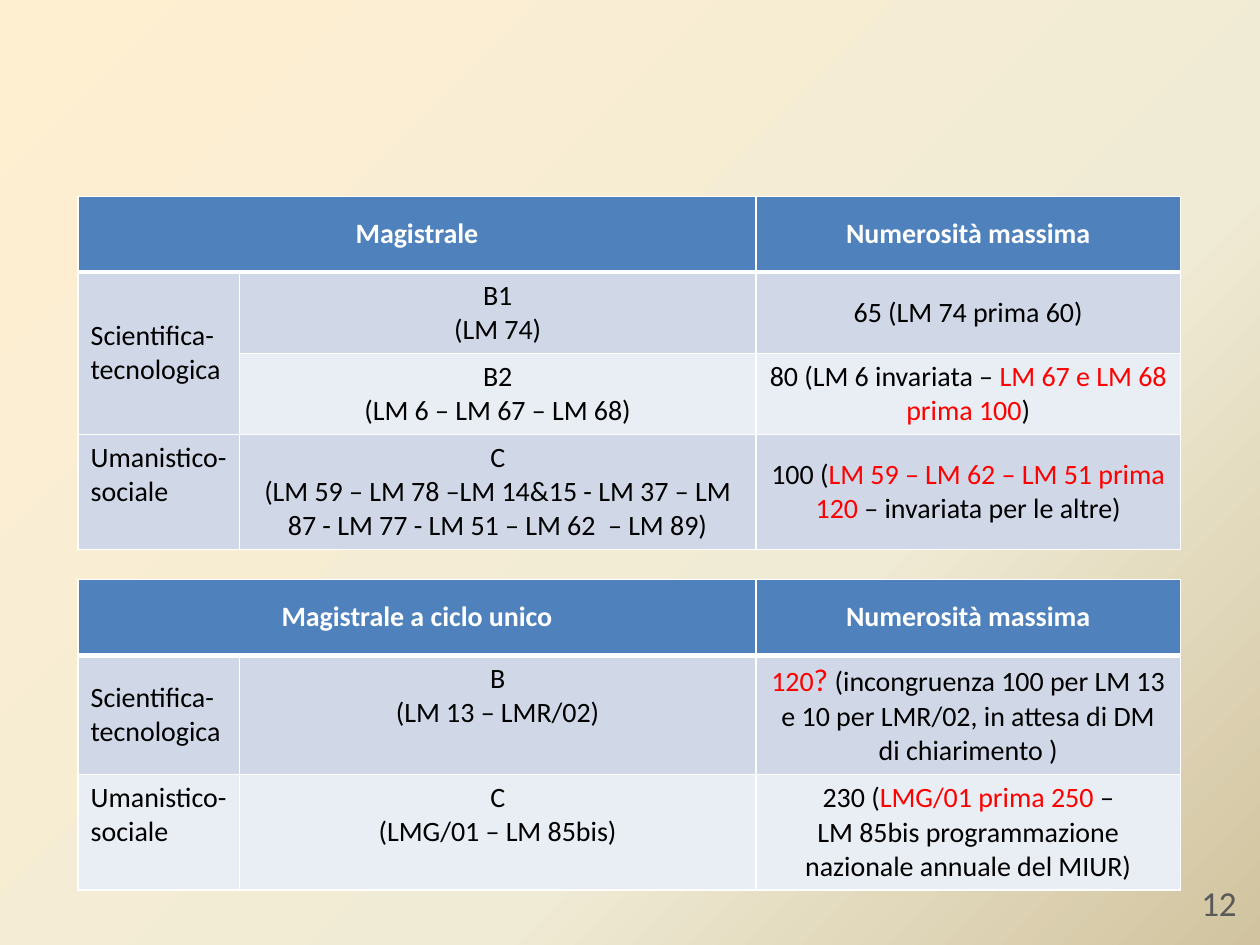
from copy import deepcopy

from pptx import Presentation
from pptx.dml.color import RGBColor
from pptx.enum.text import MSO_ANCHOR, PP_ALIGN
from pptx.oxml import parse_xml
from pptx.oxml.ns import nsdecls, qn
from pptx.util import Inches, Pt

CENTER, LEFT = PP_ALIGN.CENTER, PP_ALIGN.LEFT
TOP, MIDDLE = MSO_ANCHOR.TOP, MSO_ANCHOR.MIDDLE
WHITE = RGBColor(0xFF, 0xFF, 0xFF)
BLACK = RGBColor(0, 0, 0)
RED = RGBColor(0xFF, 0, 0)
GREY = RGBColor(0x59, 0x59, 0x59)
BLUE = RGBColor(0x4F, 0x81, 0xBD)
BAND_DARK = RGBColor(0xD0, 0xD8, 0xE8)
BAND_LIGHT = RGBColor(0xE9, 0xED, 0xF4)
BACKGROUND = [(0, RGBColor(0xFF, 0xEF, 0xD1)),
              (0.65, RGBColor(0xF0, 0xEB, 0xD5)),
              (1, RGBColor(0xD1, 0xC3, 0x9F))]

BODY = {"name": "Calibri", "size": Pt(16), "bold": False}
COL_WIDTHS = [1.28, 4.1, 3.37]
SCIENCE, HUMANITIES = "Scientifica-tecnologica", "Umanistico-sociale"
HEADING = "Numerosità massima"

MASTER = {
    "heights": [0.6, 0.64, 0.64, 0.91],
    "title": "Magistrale",
    "rows": [
        (SCIENCE, MIDDLE, ["B1", "(LM 74)"], [("65 (LM 74 prima 60)", {})]),
        (None, MIDDLE, ["B2", "(LM 6 – LM 67 – LM 68)"],
         [("80 (LM 6 invariata – ", {}),
          ("LM 67 e LM 68 prima 100", {"color": RED}), (")", {})]),
        (HUMANITIES, TOP,
         ["C", "(LM 59 – LM 78 –LM 14&15 - LM 37 – LM 87 - LM 77 - LM 51 – LM 62  – LM 89)"],
         [("100 (", {}), ("LM 59 – LM 62 – LM 51 prima 120 ", {"color": RED}),
          ("– invariata per le altre)", {})]),
    ],
}
SINGLE_CYCLE = {
    "heights": [0.6, 0.94, 0.91],
    "title": "Magistrale a ciclo unico",
    "rows": [
        (SCIENCE, MIDDLE, ["B", "(LM 13 – LMR/02)"],
         [("120", {"color": RED}), ("?", {"color": RED, "size": Pt(18)}),
          (" (incongruenza 100 per LM 13 e 10 per LMR/02, in attesa di DM di chiarimento )", {})]),
        (HUMANITIES, TOP, ["C", "(LMG/01 – LM 85bis)"],
         [("230 (", {}), ("LMG/01 prima 250 ", {"color": RED}),
          ("–\vLM 85bis programmazione nazionale annuale del MIUR)", {})]),
    ],
}


def write_runs(p, runs, base, align):
    p.alignment = align
    for text, changes in runs:
        parts = text.split("\v")
        for i, part in enumerate(parts):
            if i:
                p.add_line_break()
            r = p.add_run()
            r.text = part
            style = {"color": BLACK, **base, **changes}
            r.font.color.rgb = style.pop("color")
            for name, value in style.items():
                setattr(r.font, name, value)


def write_paragraphs(tf, paragraphs, base, align):
    for i, runs in enumerate(paragraphs):
        p = tf.add_paragraph() if i else tf.paragraphs[0]
        write_runs(p, runs, base, align)


def style_cell(cell, color, row):
    tcPr = cell._tc.get_or_add_tcPr()
    widths = {"L": 1, "R": 1, "T": 3 if row == 1 else 1, "B": 3 if row == 0 else 1}
    for side, width in widths.items():
        tcPr.append(parse_xml(
            f'<a:ln{side} {nsdecls("a")} w="{Pt(width)}"><a:solidFill>'
            f'<a:srgbClr val="{WHITE}"/></a:solidFill></a:ln{side}>'))
    cell.fill.solid()
    cell.fill.fore_color.rgb = color


def add_class_table(s, x, y, data):
    heights, rows = data["heights"], data["rows"]
    frame = s.shapes.add_table(len(heights), len(COL_WIDTHS), Inches(x), Inches(y),
                               Inches(sum(COL_WIDTHS)), Inches(sum(heights)))
    table = frame.table
    for column, width in zip(table.columns, COL_WIDTHS):
        column.width = Inches(width)
    for i, height in enumerate(heights):
        table.rows[i].height = Inches(height)
        color = BLUE if i == 0 else BAND_DARK if i % 2 else BAND_LIGHT
        for cell in table.rows[i].cells:
            style_cell(cell, color, i)

    table.cell(0, 0).merge(table.cell(0, 1))
    header = {**BODY, "bold": True, "color": WHITE}
    for column, text in ((0, data["title"]), (2, HEADING)):
        cell = table.cell(0, column)
        cell.vertical_anchor = MIDDLE
        write_paragraphs(cell.text_frame, [[(text, {})]], header, CENTER)

    for i, (area, anchor, classes, limit) in enumerate(rows, 1):
        area_cell, class_cell, limit_cell = table.rows[i].cells
        if area:
            area_cell.vertical_anchor = anchor
            write_paragraphs(area_cell.text_frame, [[(area, {})]], BODY, LEFT)
        else:
            table.cell(i - 1, 0).merge(area_cell)
        write_paragraphs(class_cell.text_frame, [[(t, {})] for t in classes], BODY, CENTER)
        limit_cell.vertical_anchor = MIDDLE
        write_paragraphs(limit_cell.text_frame, [limit], BODY, CENTER)


def add_page_number(s, x, y, w, h):
    tf = s.shapes.add_textbox(Inches(x), Inches(y), Inches(w), Inches(h)).text_frame
    tf.word_wrap = True
    number = {**BODY, "size": Pt(20), "color": GREY}
    write_paragraphs(tf, [[("12", {})]], number, CENTER)


def paint_background(s):
    fill = s.background.fill
    fill.gradient()
    fill.gradient_angle = 315
    stops = s._element.find(".//" + qn("a:gsLst"))
    stops.append(deepcopy(stops[-1]))
    for stop, (position, color) in zip(fill.gradient_stops, BACKGROUND):
        stop.position = position
        stop.color.rgb = color


def main():
    prs = Presentation()
    prs.slide_width, prs.slide_height = Inches(10), Inches(7.5)
    s = prs.slides.add_slide(prs.slide_layouts[6])
    paint_background(s)
    add_class_table(s, 0.62, 1.56, MASTER)
    add_class_table(s, 0.62, 4.6, SINGLE_CYCLE)
    add_page_number(s, 9.38, 6.95, 0.59, 0.4)
    prs.save("out.pptx")


if __name__ == "__main__":
    main()
